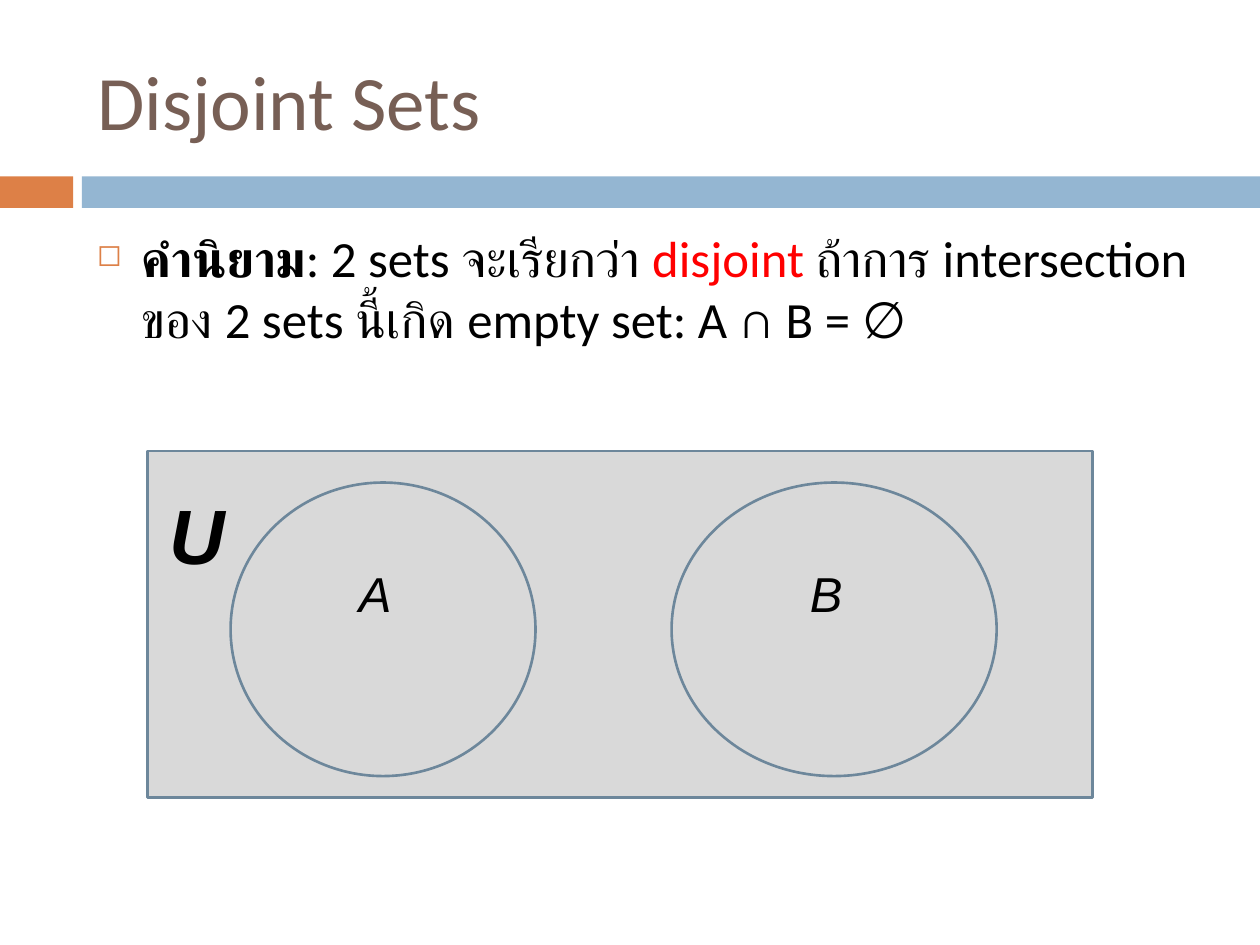
from lxml.etree import SubElement
from pptx import Presentation
from pptx.dml.color import RGBColor
from pptx.enum.shapes import MSO_SHAPE
from pptx.enum.text import MSO_ANCHOR, MSO_AUTO_SIZE, PP_ALIGN
from pptx.oxml.ns import qn
from pptx.util import Inches, Pt

ORANGE, BLUE, OUTLINE = "DD8047", "94B6D2", "6D879B"
BROWN, GRAY, BLACK, RED = "775F55", "D9D9D9", "000000", "FF0000"
CONTENT_LEFT, CONTENT_WIDTH = 0.67, 8.92
CIRCLE_TOP, CIRCLE_HEIGHT = 3.83, 2.33
LABEL_TOP = 4.42


def color(value):
    return RGBColor.from_string(value)


def inches(*lengths):
    return [Inches(length) for length in lengths]


def format_run(run, font, size, fill, bold=False, italic=False):
    run.font.name = font
    run.font.size = Pt(size)
    run.font.bold = bold
    run.font.italic = italic
    run.font.color.rgb = color(fill)


def add_figure(slide, kind, box, fill=None, line=None):
    shape = slide.shapes.add_shape(kind, *inches(*box))
    shape.shadow.inherit = False
    if fill:
        shape.fill.solid()
        shape.fill.fore_color.rgb = color(fill)
    else:
        shape.fill.background()
    if line:
        shape.line.color.rgb = color(line)
        shape.line.width = Pt(1.5)
    else:
        shape.line.fill.background()


def add_label(slide, text, box, size, bold=False):
    text_frame = slide.shapes.add_textbox(*inches(*box)).text_frame
    text_frame.word_wrap = True
    text_frame.auto_size = MSO_AUTO_SIZE.SHAPE_TO_FIT_TEXT
    text_frame.text = text
    format_run(text_frame.paragraphs[0].runs[0], "Arial", size, BLACK, bold, italic=True)


def set_title(slide, text):
    title = slide.shapes.title
    title.left, title.top, title.width, title.height = inches(
        CONTENT_LEFT, 0.25, CONTENT_WIDTH, 1.08)
    text_frame = title.text_frame
    text_frame.text = text
    text_frame.vertical_anchor = MSO_ANCHOR.MIDDLE
    paragraph = text_frame.paragraphs[0]
    paragraph.alignment = PP_ALIGN.LEFT
    format_run(paragraph.runs[0], "Calibri", 44, BROWN)


def set_bullet(paragraph, character, fill, percent, indent):
    properties = paragraph._p.get_or_add_pPr()
    properties.set("marL", str(Inches(indent)))
    properties.set("indent", str(-Inches(indent)))
    bullet_color = SubElement(properties, qn("a:buClr"))
    SubElement(bullet_color, qn("a:srgbClr"), val=fill)
    SubElement(properties, qn("a:buSzPct"), val=str(percent * 1000))
    SubElement(properties, qn("a:buChar"), char=character)


def add_definition(slide, parts):
    """Add one bulleted paragraph from (text, colour, bold) parts."""
    box = slide.shapes.add_textbox(*inches(CONTENT_LEFT, 1.75, CONTENT_WIDTH, 4.92))
    box.text_frame.word_wrap = True
    paragraph = box.text_frame.paragraphs[0]
    paragraph.space_before = Pt(7)
    set_bullet(paragraph, "◻", ORANGE, 60, 0.35)
    for text, fill, bold in parts:
        run = paragraph.add_run()
        run.text = text
        format_run(run, "Calibri", 29, fill, bold)


def add_set(slide, name, left, width, label_left):
    add_figure(slide, MSO_SHAPE.OVAL, (left, CIRCLE_TOP, width, CIRCLE_HEIGHT), line=OUTLINE)
    add_label(slide, name, (label_left, LABEL_TOP, 0.42, 0.57), 28)


def main():
    presentation = Presentation()
    presentation.slide_width, presentation.slide_height = inches(10, 7.5)
    slide = presentation.slides.add_slide(presentation.slide_layouts[5])

    for left, width, fill in ((0, 0.58, ORANGE), (0.65, 9.35, BLUE)):
        add_figure(slide, MSO_SHAPE.RECTANGLE, (left, 1.4, width, 0.25), fill)
    set_title(slide, "Disjoint Sets")
    add_definition(slide, [
        ("คำนิยาม", BLACK, True),
        (": 2 sets จะเรียกว่า ", BLACK, False),
        ("disjoint ", RED, False),
        ("ถ้าการ intersection ของ 2 sets นี้เกิด empty set: A ∩ B = ∅", BLACK, False),
    ])

    add_figure(slide, MSO_SHAPE.RECTANGLE, (1.17, 3.58, 7.5, 2.75), GRAY, OUTLINE)
    add_label(slide, "U", (1.25, 3.82, 0.58, 0.84), 44, bold=True)
    add_set(slide, "A", 1.83, 2.42, 2.75)
    add_set(slide, "B", 5.33, 2.58, 6.33)
    presentation.save("out.pptx")


if __name__ == "__main__":
    main()
